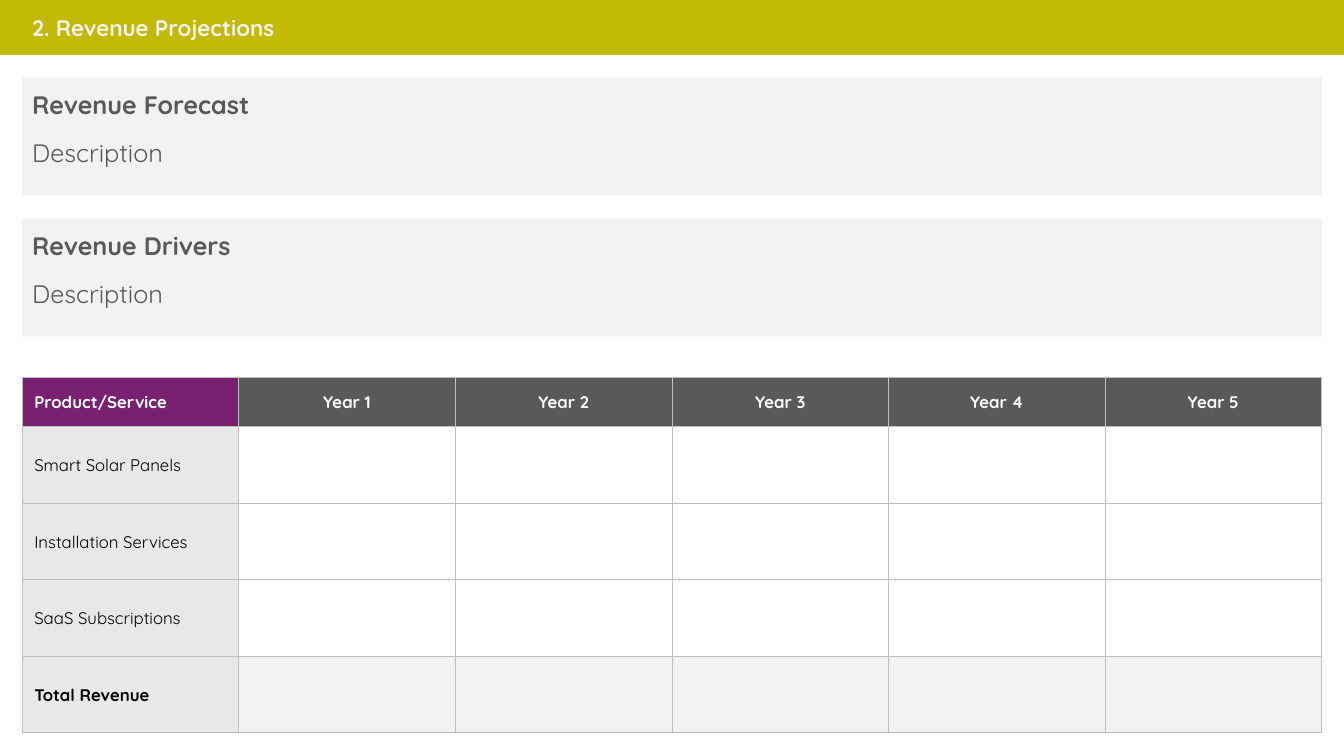
import lxml.etree
import pptx
import pptx.dml.color
import pptx.enum.shapes
import pptx.enum.text
import pptx.oxml.ns
import pptx.util

Inches = pptx.util.Inches
ALIGN = pptx.enum.text.PP_ALIGN
MIDDLE = pptx.enum.text.MSO_ANCHOR.MIDDLE

# Content
TITLE = "2. Revenue Projections"
SECTIONS = [("Revenue Forecast", "Description"), ("Revenue Drivers", "Description")]
TABLE_ROWS = [
    ["Product/Service", "Year 1", "Year 2", "Year 3", "Year 4", "Year 5"],
    ["Smart Solar Panels"] + [""] * 5,
    ["Installation Services"] + [""] * 5,
    ["SaaS Subscriptions"] + [""] * 5,
    ["Total Revenue"] + [""] * 5,
]

# Style and layout
FONT = "Quicksand"
COLORS = {
    "banner": "C3BA05", "panel": "F2F2F2", "gray": "595959", "purple": "782170",
    "label": "E8E8E8", "border": "BFBFBF", "white": "FFFFFF", "black": "000000",
}
SLIDE_WIDTH, SLIDE_HEIGHT = 13.33, 7.5
MARGIN = 0.22
CONTENT_WIDTH = 12.89
PANEL_TOP, PANEL_HEIGHT, PANEL_STEP = 0.77, 1.17, 1.4
TABLE_TOP, HEADER_HEIGHT, ROW_HEIGHT = 3.74, 0.49, 0.76


def color(name):
    return pptx.dml.color.RGBColor.from_string(COLORS[name])


def write(paragraph, text, size, color_name, bold=False, align=ALIGN.LEFT):
    paragraph.alignment = align
    font = paragraph.add_run().font
    paragraph.runs[0].text = text
    font.color.rgb = color(color_name)
    for name, value in {"name": FONT, "size": pptx.util.Pt(size), "bold": bold}.items():
        setattr(font, name, value)


def add_bar(slide, left, top, width, height, color_name):
    shape = slide.shapes.add_shape(
        pptx.enum.shapes.MSO_SHAPE.RECTANGLE,
        Inches(left), Inches(top), Inches(width), Inches(height))
    shape.shadow.inherit = False
    shape.fill.solid()
    shape.fill.fore_color.rgb = color(color_name)
    shape.line.fill.background()
    return shape


def add_text(slide, top, width, height, text, size, color_name, bold):
    box = slide.shapes.add_textbox(
        Inches(MARGIN), Inches(top), Inches(width), Inches(height))
    box.text_frame.word_wrap = True
    write(box.text_frame.paragraphs[0], text, size, color_name, bold)


def add_borders(cell):
    properties = cell._tc.get_or_add_tcPr()
    qn = pptx.oxml.ns.qn
    for side in ("lnL", "lnR", "lnT", "lnB"):
        line = lxml.etree.SubElement(properties, qn("a:" + side), w=str(pptx.util.Pt(0.5)))
        fill = lxml.etree.SubElement(line, qn("a:solidFill"))
        lxml.etree.SubElement(fill, qn("a:srgbClr"), val=COLORS["border"])


def fill_name(row, column):
    if row == 0:
        return "gray" if column else "purple"
    if column == 0:
        return "label"
    return "panel" if row == len(TABLE_ROWS) - 1 else "white"


def add_revenue_table(slide):
    column_count, row_count = len(TABLE_ROWS[0]), len(TABLE_ROWS)
    table_height = HEADER_HEIGHT + ROW_HEIGHT * (row_count - 1)
    table = slide.shapes.add_table(
        row_count, column_count, Inches(MARGIN), Inches(TABLE_TOP),
        Inches(CONTENT_WIDTH), Inches(table_height)).table
    for column in table.columns:
        column.width = Inches(CONTENT_WIDTH / column_count)
    for row, texts in enumerate(TABLE_ROWS):
        table.rows[row].height = Inches(ROW_HEIGHT if row else HEADER_HEIGHT)
        for column, text in enumerate(texts):
            cell = table.cell(row, column)
            cell_format = {
                "vertical_anchor": MIDDLE,
                "margin_left": Inches(0.01 if column else 0.12),
                "margin_right": Inches(0.01),
                "margin_top": Inches(0.01),
                "margin_bottom": 0,
            }
            for name, value in cell_format.items():
                setattr(cell, name, value)
            add_borders(cell)
            cell.fill.solid()
            cell.fill.fore_color.rgb = color(fill_name(row, column))
            if text:
                write(cell.text_frame.paragraphs[0], text, 12,
                      "black" if row else "white", row in (0, row_count - 1),
                      ALIGN.CENTER if column else ALIGN.LEFT)


def main():
    presentation = pptx.Presentation()
    presentation.slide_width = Inches(SLIDE_WIDTH)
    presentation.slide_height = Inches(SLIDE_HEIGHT)
    slide = presentation.slides.add_slide(presentation.slide_layouts[6])

    # Title banner
    banner = add_bar(slide, 0, 0, SLIDE_WIDTH, 0.54, "banner")
    banner.line.color.rgb = color("banner")
    banner.line.width = pptx.util.Pt(1.5)
    add_text(slide, 0.09, 8.08, 0.37, TITLE, 16, "panel", True)

    # Description panels
    for index, (heading, description) in enumerate(SECTIONS):
        top = PANEL_TOP + index * PANEL_STEP
        add_bar(slide, MARGIN, top, CONTENT_WIDTH, PANEL_HEIGHT, "panel")
        add_text(slide, top + 0.07, 6.95, 0.4, heading, 18, "gray", True)
        add_text(slide, top + 0.54, 11.5, 0.4, description, 18, "gray", False)

    # Revenue table
    add_revenue_table(slide)
    presentation.save("out.pptx")


if __name__ == "__main__":
    main()
